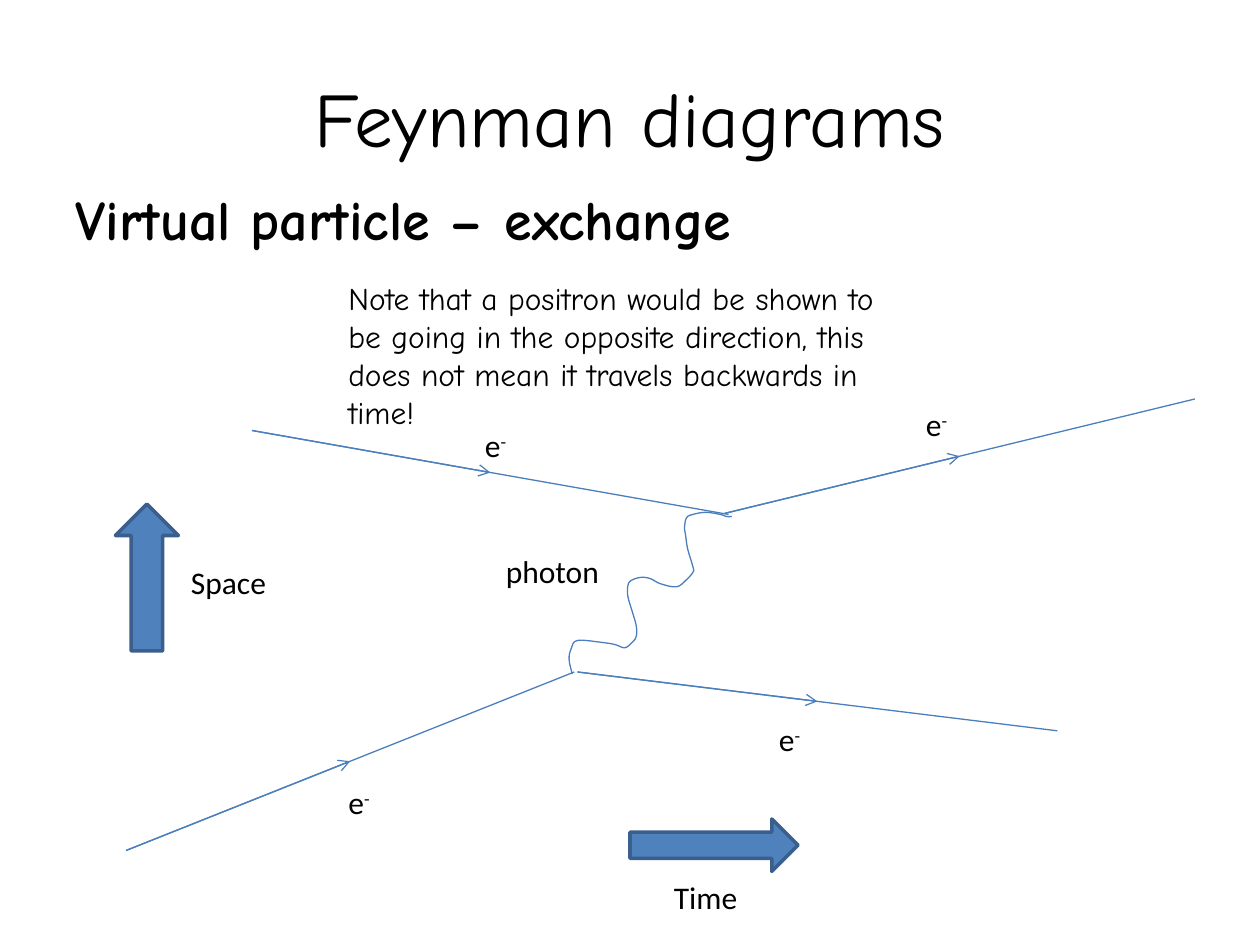
import dataclasses
import itertools
import typing

import lxml.etree
import pptx
import pptx.dml.color
import pptx.enum.shapes
import pptx.enum.text
import pptx.oxml.ns
import pptx.util

COLOURS = {"text": "000000", "line": "4B7EBC", "fill": "4F81BD", "edge": "3A5F8C"}
CELL = pptx.util.Inches(1) // 12
COLUMNS, ROWS = 120, 90
HEADING_FONT, LABEL_FONT = "Comic Neue", "Calibri"
SHAPES = pptx.enum.shapes.MSO_SHAPE
ALIGN = pptx.enum.text.PP_ALIGN
ANCHOR = pptx.enum.text.MSO_ANCHOR
FIT = pptx.enum.text.MSO_AUTO_SIZE

Point = tuple[float, float]


@dataclasses.dataclass(frozen=True)
class Area:
    column: float
    row: float
    columns: float
    rows: float

    def lengths(self) -> list[int]:
        return [cells(value) for value in dataclasses.astuple(self)]


@dataclasses.dataclass(frozen=True)
class Label:
    area: Area
    text: str
    raised: str = ""
    font: str = LABEL_FONT
    size: float = 18
    bold: bool = False
    align: ALIGN = ALIGN.LEFT
    anchor: ANCHOR = ANCHOR.TOP
    before: float = 0
    fit: FIT = FIT.SHAPE_TO_FIT_TEXT


@dataclasses.dataclass(frozen=True)
class Track:
    start: Point
    end: Point

    def middle(self) -> Point:
        return (self.start[0] + self.end[0]) / 2, (self.start[1] + self.end[1]) / 2


@dataclasses.dataclass(frozen=True)
class Axis:
    shape: SHAPES
    area: Area


TRACKS = [
    Track((24, 41), (69.4, 49)),
    Track((69, 48.9), (113.8, 38)),
    Track((12, 81), (54.7, 64)),
    Track((55, 64), (100.7, 69.6)),
]

PHOTON = [
    (54.5, 64.2), (54.2, 62.8), (54.4, 61.8), (55, 61), (57.4, 61.2),
    (58.6, 61.4), (59.5, 61.7), (60.2, 61.2), (60.6, 60.6), (60.6, 59.6),
    (60.2, 58.2), (59.8, 56.8), (59.8, 55.8), (60.1, 55.3), (61, 55),
    (61.9, 55.1), (62.9, 55.6), (64.4, 55.9), (65.3, 55.3), (66, 54.5),
    (66, 54), (65.5, 52.3), (65.3, 51), (65.2, 50.2), (65.4, 49.3),
    (66, 49), (67.2, 48.8), (68.6, 49), (69.2, 49.2), (69.7, 49.2),
]

AXES = [
    Axis(SHAPES.RIGHT_ARROW, Area(60, 78, 16, 5)),
    Axis(SHAPES.UP_ARROW, Area(11, 48, 6, 14)),
]

HEADINGS = [
    Label(Area(6, 3.6, 108, 15), "Feynman diagrams", font=HEADING_FONT, size=44,
          align=ALIGN.CENTER, anchor=ANCHOR.MIDDLE, fit=FIT.NONE),
    Label(Area(6, 17, 108, 45), "Virtual particle – exchange", font=HEADING_FONT,
          size=32, bold=True, before=6.4, fit=FIT.NONE),
]

ELECTRON_CORNERS = [(32, 74), (73, 68), (45, 40), (87, 38)]

LABELS = [
    Label(Area(47, 52, 12, 4.8), "photon"),
    *(Label(Area(column, row, 8, 4.8), "e", raised="-") for column, row in ELECTRON_CORNERS),
    Label(Area(63, 83, 14, 5), "Time"),
    Label(Area(17, 53, 14, 5), "Space"),
    Label(Area(32, 26, 55, 19.4),
          "Note that a positron would be shown to be going in the opposite direction, "
          "this does not mean it travels backwards in time!", font=HEADING_FONT),
]


def cells(count: float) -> int:
    return round(count * CELL)


def colour(name: str) -> pptx.dml.color.RGBColor:
    return pptx.dml.color.RGBColor.from_string(COLOURS[name])


def style_line(line: typing.Any, name: str, width: float) -> None:
    line.color.rgb = colour(name)
    line.width = pptx.util.Pt(width)


def draw_label(page: typing.Any, label: Label) -> None:
    box = page.shapes.add_textbox(*label.area.lengths())
    frame = box.text_frame
    frame.word_wrap = True
    frame.auto_size = label.fit
    frame.vertical_anchor = label.anchor
    para = frame.paragraphs[0]
    para.alignment = label.align
    para.space_before = pptx.util.Pt(label.before)
    for text in filter(None, (label.text, label.raised)):
        span = para.add_run()
        span.text = text
        span.font.name = label.font
        span.font.size = pptx.util.Pt(label.size)
        span.font.bold = label.bold
        span.font.color.rgb = colour("text")
        if text == label.raised:
            span._r.get_or_add_rPr().set("baseline", "30000")


def draw_segment(group: typing.Any, start: Point, end: Point, arrow: bool) -> None:
    connector = group.shapes.add_connector(
        pptx.enum.shapes.MSO_CONNECTOR.STRAIGHT, *map(cells, (*start, *end)))
    style_line(connector.line, "line", 0.75)
    properties = connector.element.spPr
    if arrow:
        outline = properties.find(pptx.oxml.ns.qn("a:ln"))
        lxml.etree.SubElement(outline, pptx.oxml.ns.qn("a:tailEnd"), type="arrow")
    lxml.etree.SubElement(properties, pptx.oxml.ns.qn("a:effectLst"))


def draw_track(page: typing.Any, track: Track) -> None:
    group = page.shapes.add_group_shape()
    draw_segment(group, track.start, track.end, False)
    draw_segment(group, track.start, track.middle(), True)


def smooth_curve(points: list[Point], steps: int = 4) -> typing.Iterator[Point]:
    padded = [points[0], *points, points[-1]]
    yield points[0]
    for index, step in itertools.product(range(len(points) - 1), range(1, steps + 1)):
        share = step / steps
        yield tuple(
            b + share * (c - a) / 2
            + share ** 2 * (2 * a - 5 * b + 4 * c - d) / 2
            + share ** 3 * (3 * b - a - 3 * c + d) / 2
            for a, b, c, d in zip(*padded[index:index + 4]))


def draw_photon(page: typing.Any, points: list[Point]) -> None:
    start, *rest = [(cells(x), cells(y)) for x, y in smooth_curve(points)]
    builder = page.shapes.build_freeform(*start)
    builder.add_line_segments(rest, close=False)
    wave = builder.convert_to_shape()
    wave.shadow.inherit = False
    wave.fill.background()
    style_line(wave.line, "line", 0.75)


def draw_axis(page: typing.Any, axis: Axis) -> None:
    shape = page.shapes.add_shape(axis.shape, *axis.area.lengths())
    shape.shadow.inherit = False
    shape.fill.solid()
    shape.fill.fore_color.rgb = colour("fill")
    style_line(shape.line, "edge", 2)


def main() -> None:
    deck = pptx.Presentation()
    deck.slide_width, deck.slide_height = cells(COLUMNS), cells(ROWS)
    page = deck.slides.add_slide(deck.slide_layouts[6])
    for heading in HEADINGS:
        draw_label(page, heading)
    for track in TRACKS:
        draw_track(page, track)
    draw_photon(page, PHOTON)
    for axis in AXES:
        draw_axis(page, axis)
    for label in LABELS:
        draw_label(page, label)
    deck.save("out.pptx")


if __name__ == "__main__":
    main()
